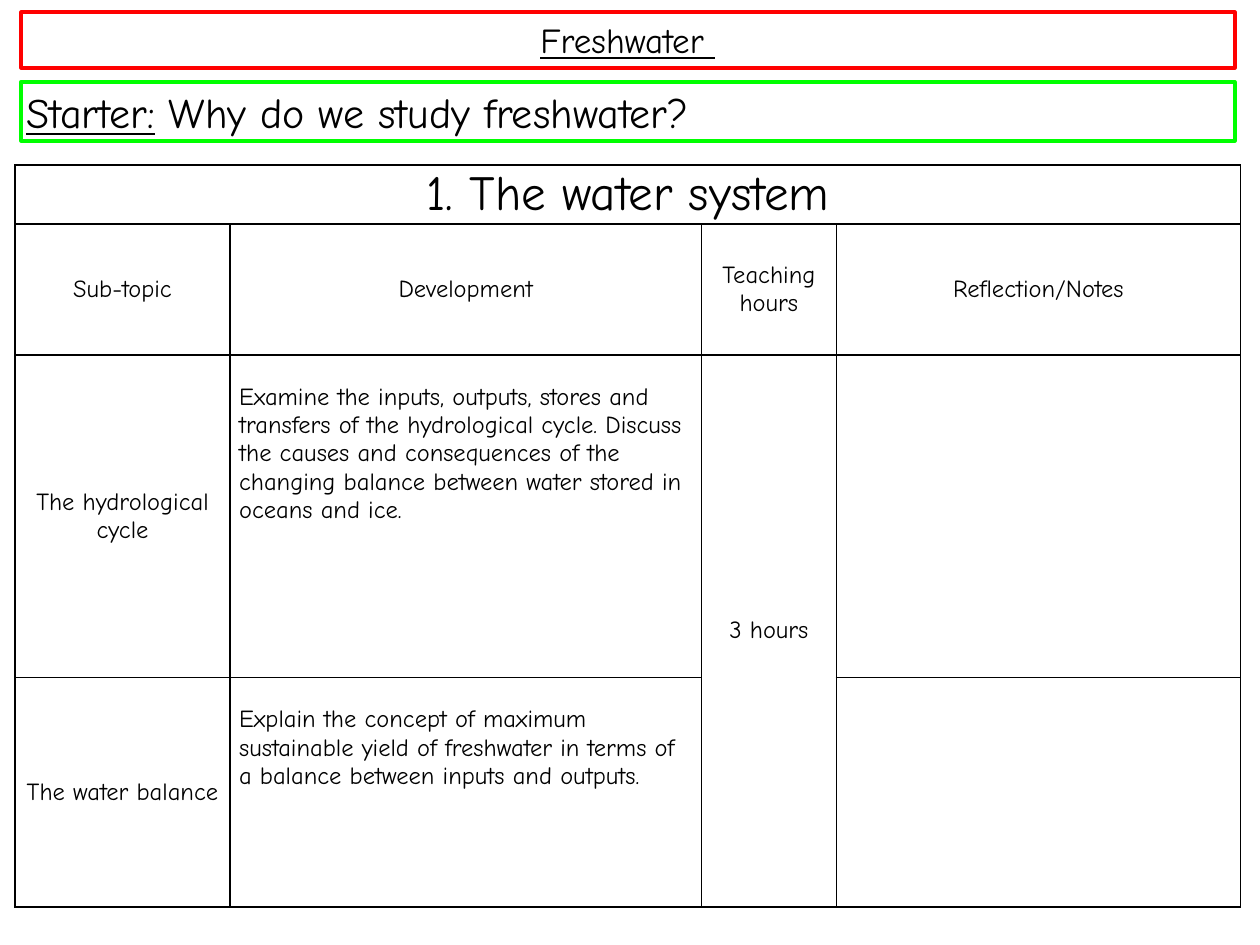
from lxml import etree
from pptx import Presentation
from pptx.dml.color import RGBColor
from pptx.enum.shapes import MSO_SHAPE
from pptx.enum.text import MSO_ANCHOR, PP_ALIGN
from pptx.oxml.ns import qn
from pptx.util import Cm, Pt

RECTANGLE = MSO_SHAPE.RECTANGLE
TOP, MIDDLE = MSO_ANCHOR.TOP, MSO_ANCHOR.MIDDLE
LEFT, CENTER = PP_ALIGN.LEFT, PP_ALIGN.CENTER

COLUMNS = [4.34, 9.5, 2.72, 8.15]
ROWS = [1.19, 2.64, 6.5, 4.62]
HEADINGS = ["Sub-topic", "Development", "Teaching hours", "Reflection/Notes"]
TOPICS = [
    ("The hydrological cycle",
     "Examine the inputs, outputs, stores and transfers of the hydrological cycle. "
     "Discuss the causes and consequences of the changing balance between water "
     "stored in oceans and ice."),
    ("The water balance",
     "Explain the concept of maximum sustainable yield of freshwater in terms of "
     "a balance between inputs and outputs."),
]


def color(value):
    return RGBColor.from_string(value)


class SlideBuilder:
    font = "Comic Neue"
    ink = "000000"

    def __init__(self, page):
        self.page = page

    def style(self, para, size, align):
        para.alignment = align
        para.font.name = self.font
        para.font.size = Pt(size)
        para.font.color.rgb = color(self.ink)

    def banner(self, top, height, outline, spans, size, align, inset):
        box = self.page.shapes.add_shape(
            RECTANGLE, Cm(0.43), Cm(top), Cm(24.46), Cm(height))
        box.shadow.inherit = False
        box.fill.background()
        box.line.color.rgb = color(outline)
        box.line.width = Pt(2.25)
        frame = box.text_frame
        frame.word_wrap = True
        frame.vertical_anchor = TOP
        frame.margin_left = frame.margin_right = Cm(inset[0])
        frame.margin_top = frame.margin_bottom = Cm(inset[1])
        para = frame.paragraphs[0]
        self.style(para, size, align)
        for text, underlined in spans:
            span = para.add_run()
            span.text = text
            span.font.underline = underlined

    def border(self, cell):
        properties = cell._tc.get_or_add_tcPr()
        for index, side in enumerate(("a:lnL", "a:lnR", "a:lnT", "a:lnB")):
            line = etree.Element(qn(side), w=str(Pt(1)))
            fill = etree.SubElement(line, qn("a:solidFill"))
            etree.SubElement(fill, qn("a:srgbClr"), val=self.ink)
            properties.insert(index, line)

    def table(self, left, top, columns, rows):
        frame = self.page.shapes.add_table(
            len(rows), len(columns), Cm(left), Cm(top),
            Cm(sum(columns)), Cm(sum(rows)))
        table = frame.table
        table.first_row = table.horz_banding = False
        for column, width in zip(table.columns, columns):
            column.width = Cm(width)
        for row, height in zip(table.rows, rows):
            row.height = Cm(height)
        for cell in table.iter_cells():
            cell.fill.background()
            self.border(cell)
            self.cell(cell, "")
        return table

    def cell(self, cell, text, size=14, align=CENTER, anchor=MIDDLE, margin_top=0):
        cell.vertical_anchor = anchor
        cell.margin_left = cell.margin_right = Cm(0.18)
        cell.margin_top, cell.margin_bottom = Cm(margin_top), 0
        cell.text = text
        self.style(cell.text_frame.paragraphs[0], size, align)


def main():
    deck = Presentation()
    deck.slide_width, deck.slide_height = Cm(25.4), Cm(19.05)
    builder = SlideBuilder(deck.slides.add_slide(deck.slide_layouts[6]))

    builder.banner(1.65, 1.19, "00FF00",
                   [("Starter:", True), (" Why do we study freshwater?", False)],
                   24, LEFT, (0.1, 0.1))
    builder.banner(0.25, 1.12, "FF0000", [("Freshwater ", True)],
                   20, CENTER, (0.25, 0.13))

    table = builder.table(0.3, 3.33, COLUMNS, ROWS)
    table.cell(0, 0).merge(table.cell(0, 3))
    table.cell(2, 2).merge(table.cell(3, 2))
    builder.cell(table.cell(0, 0), "1. The water system", size=28)
    for column, heading in enumerate(HEADINGS):
        builder.cell(table.cell(1, column), heading)
    for row, (topic, development) in enumerate(TOPICS, start=2):
        builder.cell(table.cell(row, 0), topic)
        builder.cell(table.cell(row, 1), development,
                     align=LEFT, anchor=TOP, margin_top=0.57)
    builder.cell(table.cell(2, 2), "3 hours")

    deck.save("out.pptx")


if __name__ == "__main__":
    main()
